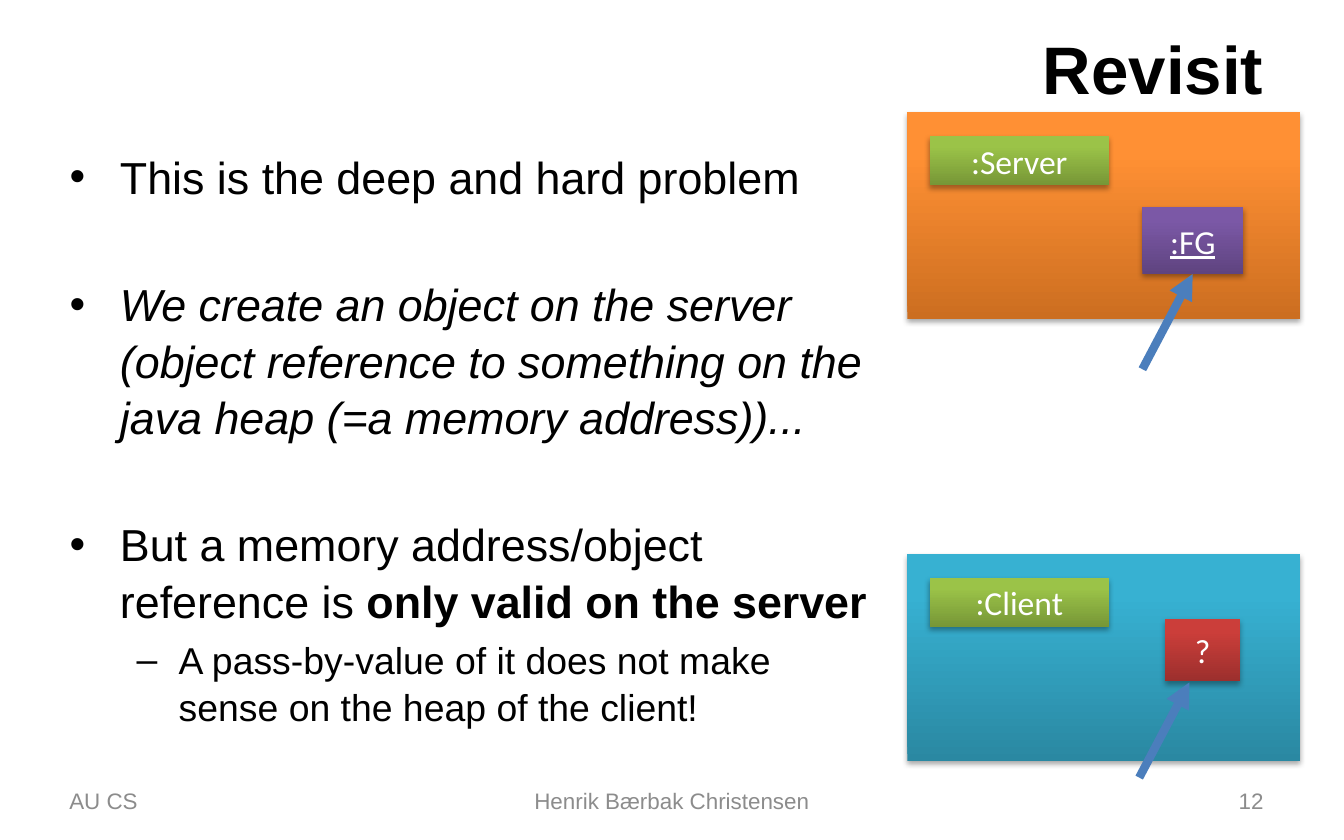
from dataclasses import dataclass

from lxml.etree import SubElement
from pptx import Presentation
from pptx.dml.color import RGBColor as RGB
from pptx.enum.shapes import MSO_CONNECTOR as Line, MSO_SHAPE as Shape
from pptx.enum.text import MSO_ANCHOR as Anchor, MSO_AUTO_SIZE as Fit, PP_ALIGN as Align
from pptx.oxml.ns import qn
from pptx.util import Cm, Pt


@dataclass(frozen=True)
class Theme:
    head: str = "Arial"
    label: str = "Calibri"
    ink: str = "000000"
    pale: str = "FFFFFF"
    gray: str = "8C8C8C"
    arrow: str = "4B7EBC"
    # Fades run from the bottom colour to the top colour.
    orange: tuple = ("CC6E20", "FF9034")
    teal: tuple = ("2A88A2", "37B1D2")
    green: tuple = ("779737", "9BC348")
    purple: tuple = ("5F4480", "7B58A6")
    red: tuple = ("9C2F2D", "CB3E3A")
    title: int = 36
    sizes: tuple = (24, 20)
    tag: int = 18
    foot: int = 12


def apply(item, form):
    for key, value in form.items():
        setattr(item, key, value)


def place(item, box):
    apply(item, dict(zip(("left", "top", "width", "height"), map(Cm, box))))


class Deck:
    def __init__(self, theme):
        self.theme = theme
        self.show = Presentation()
        apply(self.show, {"slide_width": Cm(25.4), "slide_height": Cm(15.88)})
        self.slide = self.show.slides.add_slide(self.show.slide_layouts[1])
        self.shapes = self.slide.shapes

    def words(self, par, text, size, face, color, **form):
        run = par.add_run()
        run.text = text
        apply(run.font, {"size": Pt(size), "name": face, **form})
        run.font.color.rgb = RGB.from_string(color)

    def line(self, item, text, size, face, color, align, **form):
        """Fill a shape with one vertically centred line of text."""
        frame = item.text_frame
        apply(frame, {"word_wrap": True, "auto_size": Fit.NONE,
                      "vertical_anchor": Anchor.MIDDLE})
        par = frame.paragraphs[0]
        par.alignment = align
        self.words(par, text, size, face, color, **form)

    def title(self, text, box):
        item = self.shapes.title
        place(item, box)
        look = self.theme
        self.line(item, text, look.title, look.head, look.ink, Align.RIGHT, bold=True)

    def list(self, rows, box):
        """Rows are (level, space before, [(text, format), ...])."""
        item = self.slide.placeholders[1]
        place(item, box)
        frame = item.text_frame
        apply(frame, {"word_wrap": True, "auto_size": Fit.NONE})
        look = self.theme
        for i, (level, gap, parts) in enumerate(rows):
            par = frame.add_paragraph() if i else frame.paragraphs[0]
            apply(par, {"level": level, "space_before": Pt(gap), "line_spacing": 1.05})
            for text, form in parts:
                self.words(par, text, look.sizes[level], look.head, look.ink, **form)

    def foot(self, text, box, align):
        look = self.theme
        item = self.shapes.add_textbox(*map(Cm, box))
        self.line(item, text, look.foot, look.head, look.gray, align)

    def block(self, box, fade, text="", **form):
        item = self.shapes.add_shape(Shape.RECTANGLE, *map(Cm, box))
        item.fill.gradient()
        item.fill.gradient_angle = 90
        for stop, color, spot in zip(item.fill.gradient_stops, fade, (0, 0.8)):
            stop.position = spot
            stop.color.rgb = RGB.from_string(color)
        item.line.fill.background()
        self.shade(item)
        if text:
            look = self.theme
            self.line(item, text, look.tag, look.label, look.pale, Align.CENTER, **form)

    def shade(self, item):
        """Give the shape a soft shadow straight below it."""
        item.shadow.inherit = False
        root = item._element.spPr.find(qn("a:effectLst"))
        cast = SubElement(root, qn("a:outerShdw"), blurRad=str(Pt(3.1)),
                          dist=str(Pt(1.8)), dir="5400000", rotWithShape="0")
        color = SubElement(cast, qn("a:srgbClr"), val=self.theme.ink)
        SubElement(color, qn("a:alpha"), val="35000")

    def arrow(self, start, end):
        item = self.shapes.add_connector(Line.STRAIGHT, *map(Cm, start + end))
        item.line.width = Pt(4.5)
        item.line.color.rgb = RGB.from_string(self.theme.arrow)
        SubElement(item.line._get_or_add_ln(), qn("a:tailEnd"), type="triangle")
        SubElement(item._element.spPr, qn("a:effectLst"))

    def host(self, top, fade, name):
        """Draw a machine panel with its named object in the corner."""
        left = 17.15
        self.block((left, top, 7.42, 3.91), fade)
        self.block((left + 0.42, top + 0.46, 3.39, 0.92), self.theme.green, name)


def main():
    look = Theme()
    deck = Deck(look)
    deck.title("Revisit", (1.27, 0.46, 22.86, 1.65))
    deck.list([
        (0, 0, [("This is the deep and hard problem", {})]),
        (0, 38, [("We create an object on the server (object reference to something "
                  "on the java heap (=a memory address))...", {"italic": True})]),
        (0, 38, [("But a memory address/object reference is ", {}),
                 ("only valid on the server", {"bold": True})]),
        (1, 4, [("A pass-by-value of it does not make sense on the heap "
                 "of the client!", {})]),
    ], (1.06, 2.65, 15.66, 11.99))

    for text, left, width, align in (
        ("AU CS", 1.06, 5.93, Align.LEFT),
        ("Henrik Bærbak Christensen", 8.68, 8.04, Align.CENTER),
        ("12", 18.2, 5.93, Align.RIGHT),
    ):
        deck.foot(text, (left, 14.71, width, 0.85), align)

    deck.host(2.12, look.orange, ":Server")
    deck.host(10.47, look.teal, ":Client")
    deck.block((21.59, 3.92, 1.91, 1.26), look.purple, ":FG", underline=True)
    deck.block((22.02, 11.71, 1.42, 1.17), look.red, "?")
    deck.arrow((21.59, 6.98), (22.54, 5.18))
    deck.arrow((21.53, 14.7), (22.48, 12.9))
    deck.show.save("out.pptx")


if __name__ == "__main__":
    main()
